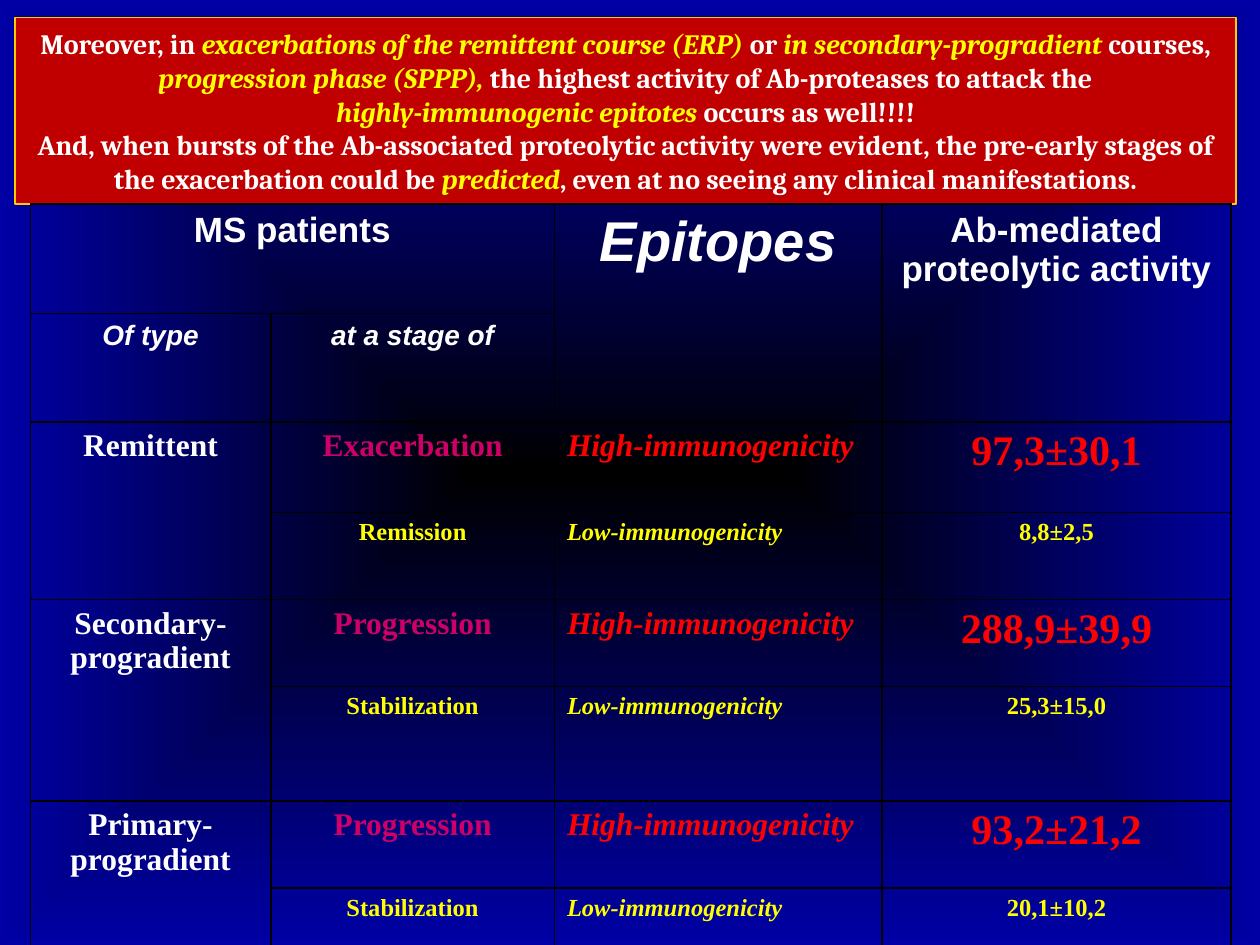
"""Build the slide on antibody proteolytic activity in MS patients."""
from dataclasses import dataclass

from lxml.etree import SubElement
from pptx import Presentation
from pptx.dml.color import RGBColor
from pptx.enum.text import MSO_ANCHOR, MSO_AUTO_SIZE, PP_ALIGN
from pptx.oxml.ns import qn
from pptx.util import Inches, Pt

WHITE, YELLOW, RED, PINK, BLACK = "FFFFFF", "FFFF00", "FF0000", "CC0066", "000000"
SERIF = "Times New Roman"


@dataclass
class Style:
    size: float
    color: str = WHITE
    font: str = SERIF
    italic: bool = False
    align: PP_ALIGN = PP_ALIGN.CENTER


@dataclass
class Course:
    name: str
    stages: tuple
    activities: tuple


TITLE = Style(16, WHITE, "Cambria")
TITLE_ITALIC = Style(16, YELLOW, "Cambria", True)
HEAD = Style(20, font="Arial")
EPITOPES = Style(32, font="Arial", italic=True)
SUBHEAD = Style(16, font="Arial", italic=True)
NAME = Style(18)
LEVELS = (
    ("High-immunogenicity", Style(18, PINK), Style(18, RED, italic=True, align=PP_ALIGN.LEFT), Style(24, RED)),
    ("Low-immunogenicity", Style(14, YELLOW), Style(14, YELLOW, italic=True, align=PP_ALIGN.LEFT), Style(14, YELLOW)),
)

TITLE_LINES = (
    (("Moreover, in ", TITLE), ("exacerbations of the remittent course (ERP)", TITLE_ITALIC),
     (" or ", TITLE), ("in secondary-progradient ", TITLE_ITALIC), ("courses, ", TITLE),
     ("progression phase (SPPP), ", TITLE_ITALIC),
     ("the highest activity of Ab-proteases to attack the", TITLE)),
    (("highly-immunogenic epitotes ", TITLE_ITALIC), ("occurs as well!!!!", TITLE)),
    (("And, when bursts of the Ab-associated proteolytic activity were evident, the pre-early "
      "stages of the exacerbation could be ", TITLE), ("predicted", TITLE_ITALIC),
     (", even at no seeing any clinical manifestations.", TITLE)),
)
COURSES = (
    Course("Remittent", ("Exacerbation", "Remission"), ("97,3±30,1", "8,8±2,5")),
    Course("Secondary-\nprogradient", ("Progression", "Stabilization"), ("288,9±39,9", "25,3±15,0")),
    Course("Primary-\nprogradient", ("Progression", "Stabilization"), ("93,2±21,2", "20,1±10,2")),
)
COLUMNS = (1.91, 2.25, 2.6, 2.77)
ROWS = (0.87, 0.86, 0.72, 0.69, 0.69, 0.91, 0.69, 0.95)


def rgb(value: str) -> RGBColor:
    """Turn a hex string into a colour."""
    return RGBColor.from_string(value)


def add_run(p, text: str, style: Style) -> None:
    """Add one bold run in the given style."""
    r = p.add_run()
    r.text = text
    r.font.name, r.font.size = style.font, Pt(style.size)
    r.font.bold, r.font.italic = True, style.italic
    r.font.color.rgb = rgb(style.color)


def write_cell(cell, text: str, style: Style) -> None:
    """Write one paragraph per line of text in a cell."""
    tf = cell.text_frame
    for i, line in enumerate(text.split("\n")):
        p = tf.add_paragraph() if i else tf.paragraphs[0]
        p.alignment = style.align
        add_run(p, line, style)


def format_cell(cell) -> None:
    """Give a cell thin black borders and no fill."""
    tc_pr = cell._tc.get_or_add_tcPr()
    for side in ("a:lnL", "a:lnR", "a:lnT", "a:lnB"):
        ln = SubElement(tc_pr, qn(side), w=str(Pt(1)))
        fill = SubElement(ln, qn("a:solidFill"))
        SubElement(fill, qn("a:srgbClr"), val=BLACK)
    cell.fill.background()


def set_background(s) -> None:
    """Fill the background with a gradient from a dark centre to blue edges."""
    fill = s.background.fill
    fill.gradient()
    for stop, color, position in zip(fill.gradient_stops, (BLACK, "0000A4"), (0, 1)):
        stop.color.rgb, stop.position = rgb(color), position
    lin = next(s.background._cSld.iter(qn("a:lin")))
    grad = lin.getparent()
    grad.remove(lin)
    shade = SubElement(grad, qn("a:path"), {"path": "shape"})
    SubElement(shade, qn("a:fillToRect"), dict.fromkeys("ltrb", "50000"))


def add_title(s) -> None:
    """Format the title placeholder as a red banner."""
    sp = s.shapes.title
    sp.left, sp.top, sp.width, sp.height = map(Inches, (0.12, 0.14, 9.69, 1.48))
    sp.fill.solid()
    sp.fill.fore_color.rgb = rgb("C00000")
    sp.line.color.rgb, sp.line.width = rgb("FFCC00"), Pt(0.75)
    tf = sp.text_frame
    tf.word_wrap, tf.auto_size = True, MSO_AUTO_SIZE.NONE
    tf.vertical_anchor = MSO_ANCHOR.MIDDLE
    p = tf.paragraphs[0]
    p.alignment = PP_ALIGN.CENTER
    for i, line in enumerate(TITLE_LINES):
        if i:
            p.add_line_break()
        for text, style in line:
            add_run(p, text, style)


def add_activity_table(s) -> None:
    """Add the table of proteolytic activity by course and stage."""
    table = s.shapes.add_table(len(ROWS), len(COLUMNS), Inches(0.24), Inches(1.62),
                               Inches(sum(COLUMNS)), Inches(sum(ROWS))).table
    table.first_row = table.horz_banding = False
    for column, width in zip(table.columns, COLUMNS):
        column.width = Inches(width)
    for row, height in zip(table.rows, ROWS):
        row.height = Inches(height)
    for cell in table.iter_cells():
        format_cell(cell)

    table.cell(0, 0).merge(table.cell(0, 1))
    for col in (2, 3):
        table.cell(0, col).merge(table.cell(1, col))
    write_cell(table.cell(0, 0), "MS patients", HEAD)
    write_cell(table.cell(0, 2), "Epitopes", EPITOPES)
    write_cell(table.cell(0, 3), "Ab-mediated proteolytic activity", HEAD)
    write_cell(table.cell(1, 0), "Of type", SUBHEAD)
    write_cell(table.cell(1, 1), "at a stage of", SUBHEAD)

    for i, course in enumerate(COURSES):
        top = 2 + 2 * i
        table.cell(top, 0).merge(table.cell(top + 1, 0))
        write_cell(table.cell(top, 0), course.name, NAME)
        for j, (epitope, *styles) in enumerate(LEVELS):
            texts = (course.stages[j], epitope, course.activities[j])
            for col, (text, style) in enumerate(zip(texts, styles), 1):
                write_cell(table.cell(top + j, col), text, style)


def main() -> None:
    """Build and save the presentation."""
    prs = Presentation()
    prs.slide_width, prs.slide_height = Inches(10), Inches(7.5)
    s = prs.slides.add_slide(prs.slide_layouts[5])
    set_background(s)
    add_title(s)
    add_activity_table(s)
    prs.save("out.pptx")


if __name__ == "__main__":
    main()
